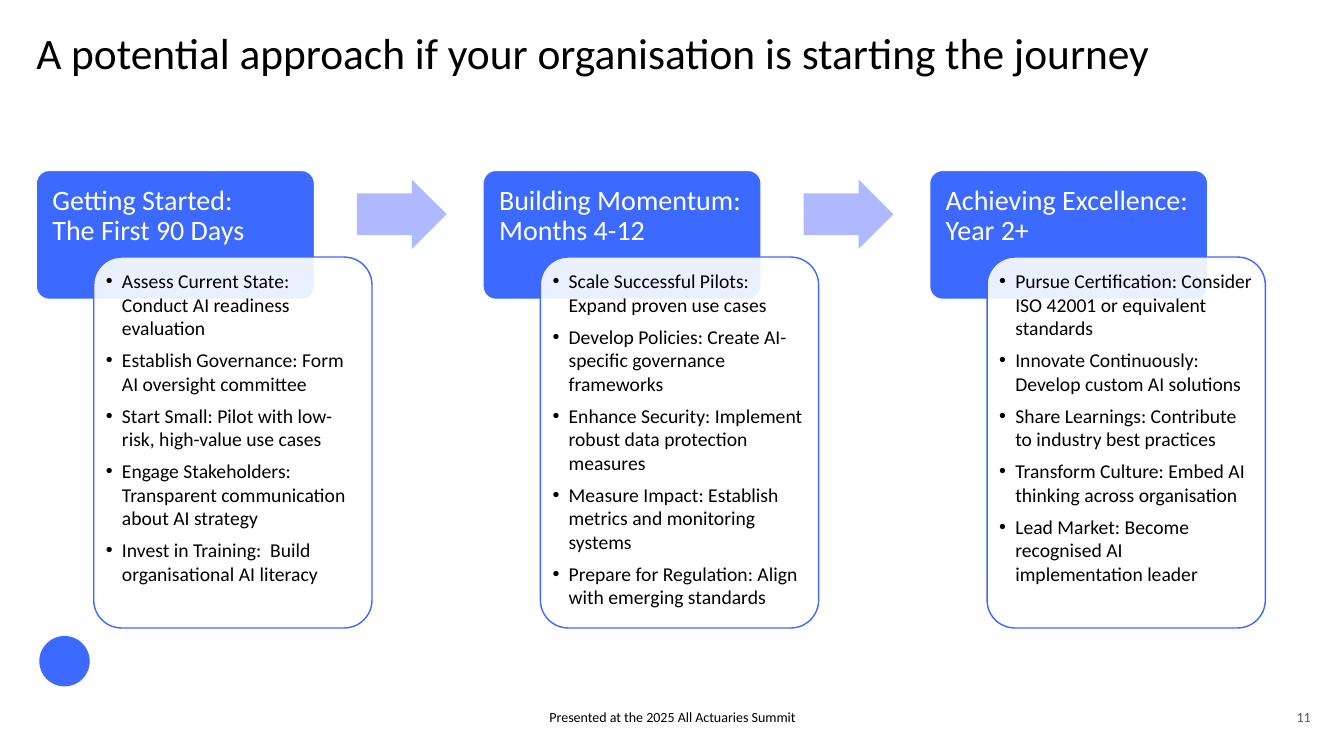
from lxml.etree import SubElement as Sub
from pptx import Presentation
from pptx.dml.color import RGBColor as RGB
from pptx.enum.shapes import MSO_SHAPE as Kind
from pptx.enum.text import MSO_ANCHOR as Anchor, PP_ALIGN as Align
from pptx.oxml.ns import qn
from pptx.util import Inches, Pt

HUES = {"blue": "3C69FF", "lilac": "AFB9FF", "white": "FFFFFF", "black": "000000", "grey": "5B5B5B"}
WIDE, HIGH = 13.33, 7.5
LEFT, TOP, STEP = 0.36, 1.69, 4.43
CARD, HEAD, BODY = 2.76, 1.28, 3.68
SHIFT, DROP, PAD = 0.57, 0.86, 0.08

STAGES = [
    (["Getting Started:", "The First 90 Days"], [
        "Assess Current State: Conduct AI readiness evaluation",
        "Establish Governance: Form AI oversight committee",
        "Start Small: Pilot with low-risk, high-value use cases",
        "Engage Stakeholders: Transparent communication about AI strategy",
        "Invest in Training:  Build organisational AI literacy"]),
    (["Building Momentum:", "Months 4-12"], [
        "Scale Successful Pilots: Expand proven use cases",
        "Develop Policies: Create AI-specific governance frameworks",
        "Enhance Security: Implement robust data protection measures",
        "Measure Impact: Establish metrics and monitoring systems",
        "Prepare for Regulation: Align with emerging standards"]),
    (["Achieving Excellence:", "Year 2+"], [
        "Pursue Certification: Consider ISO 42001 or equivalent standards",
        "Innovate Continuously: Develop custom AI solutions",
        "Share Learnings: Contribute to industry best practices",
        "Transform Culture: Embed AI thinking across organisation",
        "Lead Market: Become recognised AI implementation leader"]),
]

deck = Presentation()
deck.slide_width, deck.slide_height = Inches(WIDE), Inches(HIGH)
slide = deck.slides.add_slide(deck.slide_layouts[6])


def draw(kind, box, fill, line=None, adj=()):
    shape = slide.shapes.add_shape(kind, *map(Inches, box))
    shape.shadow.inherit = False
    shape.fill.solid()
    shape.fill.fore_color.rgb = RGB.from_string(HUES[fill])
    if line:
        shape.line.color.rgb = RGB.from_string(HUES[line])
        shape.line.width = Pt(1)
    else:
        shape.line.fill.background()
    for i, part in enumerate(adj):
        shape.adjustments[i] = part
    return shape


def write(box, paras, size, hue="black", pad=(0, 0, 0, 0), align=Align.LEFT,
          anchor=Anchor.TOP, lead=1.0, after=0):
    frame = slide.shapes.add_textbox(*map(Inches, box)).text_frame
    frame.word_wrap = True
    frame.vertical_anchor = anchor
    frame.margin_left, frame.margin_top, frame.margin_right, frame.margin_bottom = map(Inches, pad)
    for i, lines in enumerate(paras):
        para = frame.paragraphs[0] if i == 0 else frame.add_paragraph()
        para.alignment, para.line_spacing, para.space_after = align, lead, Pt(after)
        for j, line in enumerate(lines):
            if j:
                para.add_line_break()
            run = para.add_run()
            run.text = line
            run.font.name, run.font.size = "Calibri", Pt(size)
            run.font.color.rgb = RGB.from_string(HUES[hue])
    return frame


draw(Kind.OVAL, (0.39, 6.31, 0.5, 0.5), "blue")
write((LEFT, 0.32, 11.98, 1.35),
      [["A potential approach if your organisation is starting the journey"]], 31, lead=0.9)
write((12.54, 7, 0.46, 0.2), [["11"]], 10, "grey", align=Align.RIGHT, anchor=Anchor.BOTTOM)
write((4.42, 7, 4.5, 0.2), [["Presented at the 2025 All Actuaries Summit"]], 10,
      align=Align.CENTER, anchor=Anchor.BOTTOM)

for col, (title, points) in enumerate(STAGES):
    x = LEFT + col * STEP
    draw(Kind.ROUNDED_RECTANGLE, (x, TOP, CARD, HEAD), "blue", "white", [0.1])
    write((x, TOP, CARD, DROP), [title], 20, "white", pad=(0.16, 0.16, 0.16, 0.08), lead=0.9)

    panel = draw(Kind.ROUNDED_RECTANGLE, (x + SHIFT, TOP + DROP, CARD, BODY), "white", "blue", [0.1])
    tint = panel.fill._xPr.find(qn("a:solidFill"))[0]
    Sub(tint, qn("a:alpha"), val="90000")

    frame = write((x + SHIFT + PAD, TOP + DROP + PAD, CARD - 2 * PAD, BODY - 2 * PAD),
                  [[point] for point in points], 14, pad=[0.04] * 4, after=6)
    for para in frame.paragraphs:
        props = para._p.get_or_add_pPr()
        props.set("marL", str(Inches(0.16)))
        props.set("indent", str(Inches(-0.16)))
        Sub(props, qn("a:buFont"), typeface="Arial")
        Sub(props, qn("a:buChar"), char="•")

    if col < len(STAGES) - 1:
        draw(Kind.RIGHT_ARROW, (x + 3.18, TOP + 0.09, 0.89, 0.69), "lilac", adj=[0.6, 0.5])

deck.save("out.pptx")
